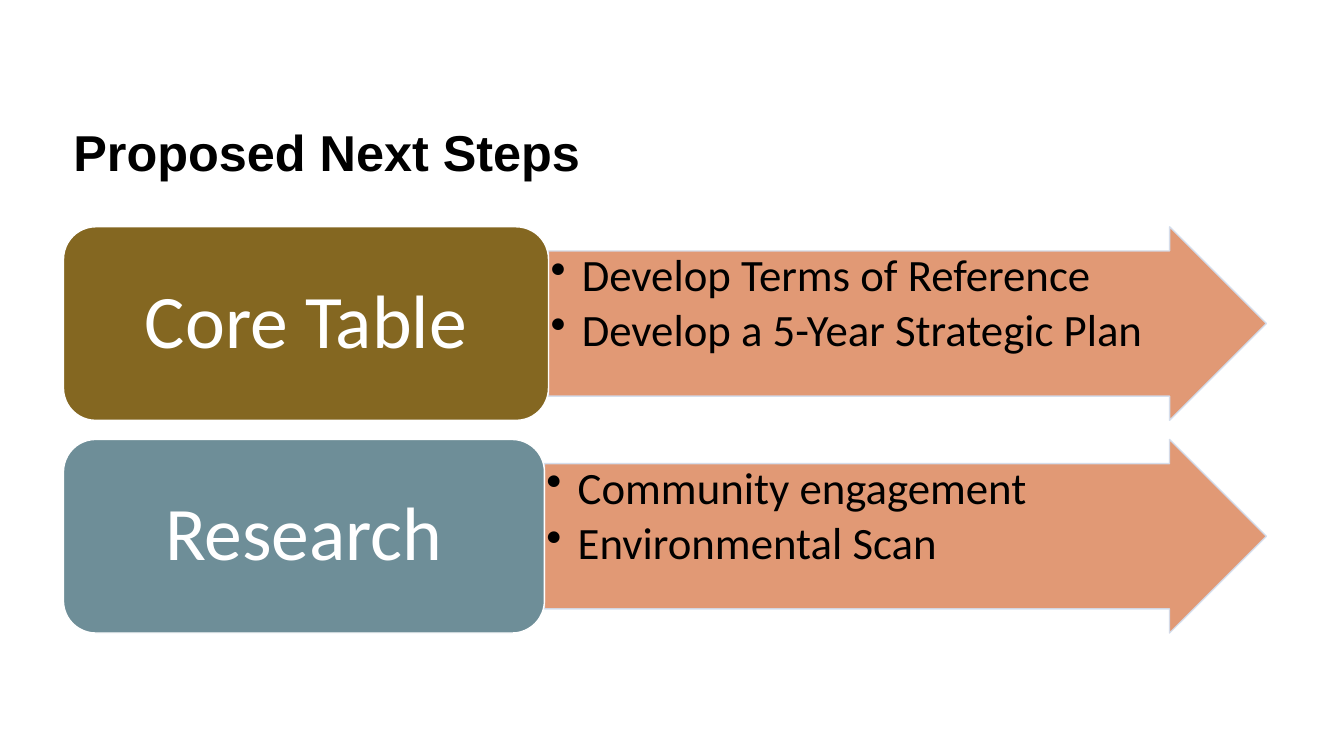
from lxml.etree import SubElement
from pptx import Presentation
from pptx.dml.color import RGBColor
from pptx.enum.shapes import MSO_SHAPE
from pptx.enum.text import MSO_ANCHOR, PP_ALIGN
from pptx.oxml.ns import qn
from pptx.util import Inches, Pt

COLORS = {
    "text": "000000",
    "label": "FFFFFF",
    "arrow": "DE8E67",
    "arrow_line": "D2DEEF",
    "core": "846721",
    "research": "6E8E98",
}
LEFT, RIGHT = 0.63, 12.56
ROWS_TOP, ROW_HEIGHT, ROW_PITCH = 2.25, 1.92, 2.11
STEPS = [
    ("Core Table", "core", 4.81, ["Develop Terms of Reference", "Develop a 5-Year Strategic Plan"]),
    ("Research", "research", 4.77, ["Community engagement", "Environmental Scan"]),
]


def rgb(name):
    """Return the named colour."""
    return RGBColor.from_string(COLORS[name])


def style_paragraph(paragraph, text, font, size, color, bold=False):
    """Write the text and set its font and line spacing."""
    paragraph.text = text
    paragraph.line_spacing = 0.9
    paragraph.font.name = font
    paragraph.font.size = Pt(size)
    paragraph.font.bold = bold
    paragraph.font.color.rgb = rgb(color)


def set_bullet(paragraph, indent):
    """Give the paragraph a round bullet with a hanging indent."""
    properties = paragraph._p.get_or_add_pPr()
    properties.set("marL", str(Inches(indent)))
    properties.set("indent", str(-Inches(indent)))
    SubElement(properties, qn("a:buChar")).set("char", "•")


def set_opacity(shape, percent):
    """Make the fill and line of the shape partly transparent."""
    for color in shape._element.spPr.iter(qn("a:srgbClr")):
        SubElement(color, qn("a:alpha")).set("val", str(percent * 1000))


def add_block(slide, preset, box, fill, line, margins, anchor):
    """Add a filled preset shape and return it."""
    shape = slide.shapes.add_shape(preset, *map(Inches, box))
    shape.shadow.inherit = False
    shape.fill.solid()
    shape.fill.fore_color.rgb = rgb(fill)
    shape.line.color.rgb = rgb(line)
    shape.line.width = Pt(1)
    frame = shape.text_frame
    frame.word_wrap = True
    frame.vertical_anchor = anchor
    frame.margin_left = frame.margin_right = Inches(margins[0])
    frame.margin_top = frame.margin_bottom = Inches(margins[1])
    return shape


def add_title(slide, left, top, width, height):
    """Add the slide heading in the given box."""
    title = slide.shapes.add_textbox(*map(Inches, (left, top, width, height)))
    title.text_frame.word_wrap = True
    style_paragraph(title.text_frame.paragraphs[0], "Proposed Next Steps", "Arial", 36, "text", True)


def add_step(slide, left, top, width, height, label, fill, label_width, items):
    """Add a labelled block followed by an arrow with its bullets."""
    arrow_box = (left + label_width, top, width - label_width, height)
    arrow = add_block(slide, MSO_SHAPE.RIGHT_ARROW, arrow_box, "arrow", "arrow_line",
                      (0.02, 0.02), MSO_ANCHOR.TOP)
    arrow.adjustments[0] = 0.75
    set_opacity(arrow, 90)
    frame = arrow.text_frame
    for index, item in enumerate(items):
        paragraph = frame.add_paragraph() if index else frame.paragraphs[0]
        set_bullet(paragraph, 0.31)
        style_paragraph(paragraph, item, "Calibri", 32, "text")
        paragraph.alignment = PP_ALIGN.LEFT
        paragraph.space_after = Pt(4.8)
    block = add_block(slide, MSO_SHAPE.ROUNDED_RECTANGLE, (left, top, label_width, height),
                      fill, "label", (0.23, 0.11), MSO_ANCHOR.MIDDLE)
    paragraph = block.text_frame.paragraphs[0]
    style_paragraph(paragraph, label, "Calibri", 54, "label")
    paragraph.alignment = PP_ALIGN.CENTER


def main():
    """Build and save the slide."""
    presentation = Presentation()
    presentation.slide_width = Inches(13.33)
    presentation.slide_height = Inches(7.5)
    slide = presentation.slides.add_slide(presentation.slide_layouts[6])
    add_title(slide, LEFT, 1.22, 8.67, 0.85)
    for row, step in enumerate(STEPS):
        add_step(slide, LEFT, ROWS_TOP + row * ROW_PITCH, RIGHT - LEFT, ROW_HEIGHT, *step)
    presentation.save("out.pptx")


if __name__ == "__main__":
    main()
